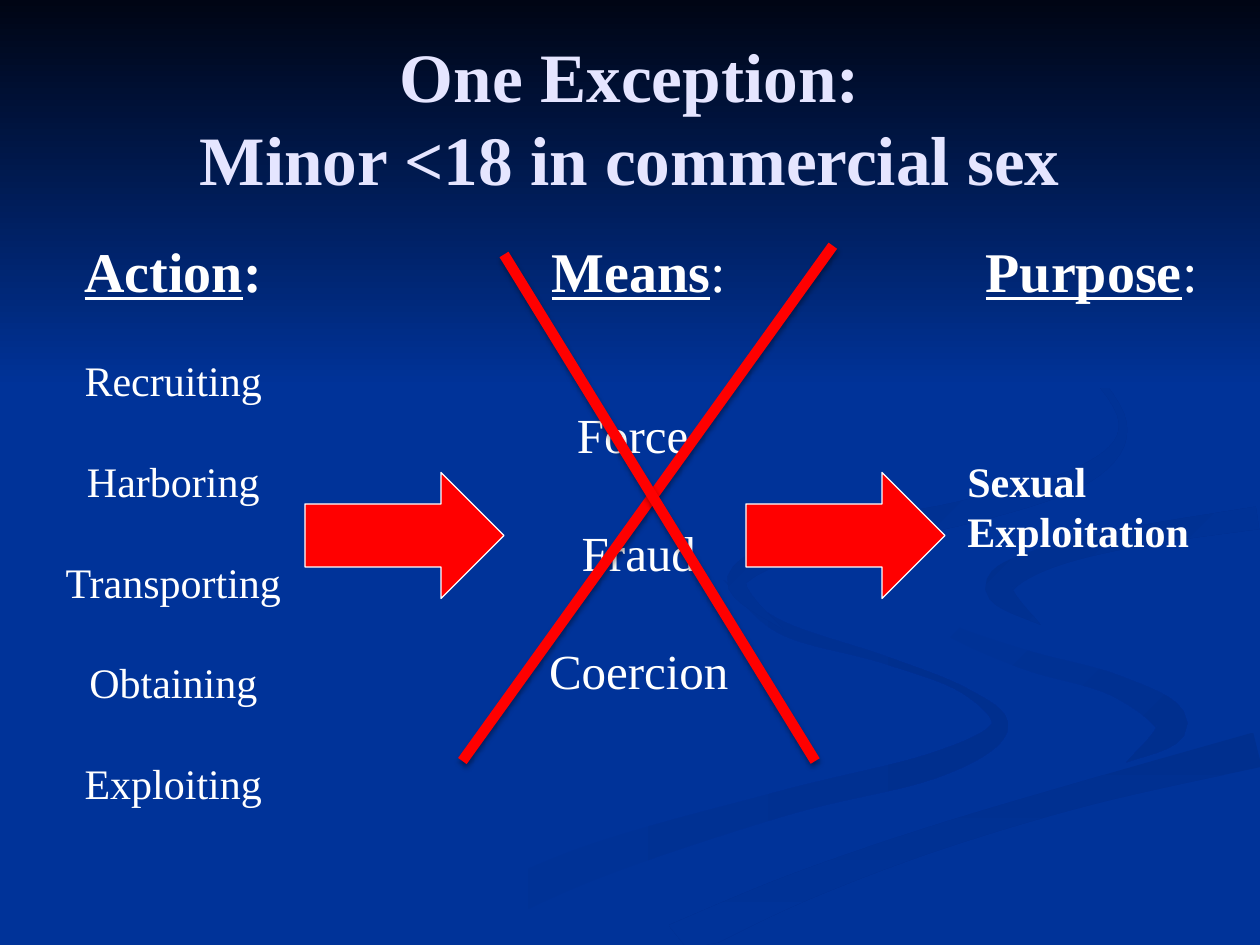
from math import hypot

from lxml import etree
from pptx import Presentation
from pptx.dml.color import RGBColor
from pptx.enum.shapes import MSO_CONNECTOR, MSO_SHAPE
from pptx.enum.text import MSO_ANCHOR, MSO_AUTO_SIZE, PP_ALIGN
from pptx.oxml import parse_xml
from pptx.oxml.ns import nsdecls, qn
from pptx.util import Inches, Pt

CENTER, LEFT = PP_ALIGN.CENTER, PP_ALIGN.LEFT
MIDDLE = MSO_ANCHOR.MIDDLE
NO_AUTOFIT = MSO_AUTO_SIZE.NONE
RECTANGLE, RIGHT_ARROW = MSO_SHAPE.RECTANGLE, MSO_SHAPE.RIGHT_ARROW
STRAIGHT = MSO_CONNECTOR.STRAIGHT

FONT = "Times New Roman"
NAVY, BLUE, SHADE = "000514", "003399", "002F8E"
WHITE, RED, LAVENDER = "FFFFFF", "FF0000", "E5E5FF"
SLIDE_WIDTH, SLIDE_HEIGHT = 10, 7.5
HEADING_SIZE, ITEM_SIZE, LINE_HEIGHT = 32, 24, 1.2
COLUMN_TOP = 1.83
ARROW_LEFT, ARROW_TOP, ARROW_PITCH = 2.42, 3.75, 3.5
STRIKE_BOTTOM = 6.04
CURVE_STEPS = 8

LEFT_SWIRL = [(5.74, 4.6, 0), (6.2, 4.98, 0.1), (7, 5.23, 0.06), (7.65, 5.48, 0.05),
              (7.93, 5.78, 0.14), (7.4, 6.08, 0.2), (6.2, 6.38, 0.2), (4.6, 6.88, 0.28),
              (3.3, 7.49, 0.3)]
RIGHT_SWIRL = [(7.24, 4.64, 0), (7.45, 4.95, 0.08), (8.12, 5.23, 0.15),
               (8.85, 5.44, 0.17), (9.3, 5.75, 0.25), (8.94, 6.05, 0)]
LOWER_SWIRL = [(9.98, 5.95, 0.28), (8.64, 6.29, 0.2), (7.4, 6.66, 0.2),
               (6.3, 7.06, 0.24), (5.37, 7.48, 0.3)]
EDGE_SWIRL = [(9.98, 4.11, 0.18), (8.95, 4.27, 0.16), (8.25, 4.45, 0.18),
              (7.93, 4.67, 0.22), (8.26, 4.96, 0)]
UPPER_SWIRL = [(7.62, 2.33, 0), (8.45, 2.77, 0.05), (8.91, 3.35, 0.06),
               (8.6, 3.77, 0.15), (7.6, 4.08, 0.19), (6.5, 4.28, 0.18),
               (5.85, 4.6, 0.16), (6.22, 5, 0)]


def color(value):
    """Return the colour for a hex string."""
    return RGBColor.from_string(value)


def curve_through(waypoints):
    """Return a smooth Catmull-Rom run of (x, y, width) through the waypoints."""
    padded = [waypoints[0], *waypoints, waypoints[-1]]
    curve = []
    for before, start, end, after in zip(padded, padded[1:], padded[2:], padded[3:]):
        for step in range(CURVE_STEPS):
            t = step / CURVE_STEPS
            curve.append(tuple(
                b + ((c - a) * t + (2 * a - 5 * b + 4 * c - d) * t ** 2
                     + (3 * b - a - 3 * c + d) * t ** 3) / 2
                for a, b, c, d in zip(before, start, end, after)))
    return [*curve, waypoints[-1]]


def ribbon_outline(waypoints):
    """Return the outline of a ribbon that follows its centre line."""
    curve = curve_through(waypoints)
    one_side, other_side = [], []
    neighbours = zip([curve[0], *curve], curve, [*curve[1:], curve[-1]])
    for previous, (x, y, width), following in neighbours:
        run, rise = following[0] - previous[0], following[1] - previous[1]
        half = max(width, 0) / 2 / hypot(run, rise)
        one_side.append((x - rise * half, y + run * half))
        other_side.append((x + rise * half, y - run * half))
    outline = one_side + other_side[::-1]
    return [(x, min(y, SLIDE_HEIGHT)) for x, y in outline]


def fill_gradient(shape, first, last, angle):
    """Give a shape a clockwise gradient, no outline and no shadow."""
    shape.shadow.inherit = False
    shape.line.fill.background()
    shape.fill.gradient()
    shape.fill.gradient_angle = (360 - angle) % 360
    for stop, value in zip(shape.fill.gradient_stops, (first, last)):
        stop.color.rgb = color(value)


def add_swirl(slide, waypoints, first, last, angle):
    """Add a faint tapered ribbon to the backdrop."""
    points = ribbon_outline(waypoints)
    builder = slide.shapes.build_freeform(
        *[Inches(value) for value in points[0]])
    builder.add_line_segments([(Inches(x), Inches(y)) for x, y in points[1:]])
    fill_gradient(builder.convert_to_shape(), first, last, angle)


def add_backdrop(slide):
    """Draw the blue ground, its swirls and the dark band at the top."""
    slide.background.fill.solid()
    slide.background.fill.fore_color.rgb = color(BLUE)
    add_swirl(slide, LEFT_SWIRL, BLUE, SHADE, 0)
    add_swirl(slide, RIGHT_SWIRL, BLUE, SHADE, 45)
    add_swirl(slide, LOWER_SWIRL, SHADE, BLUE, 90)
    add_swirl(slide, EDGE_SWIRL, SHADE, BLUE, 45)
    add_swirl(slide, UPPER_SWIRL, SHADE, BLUE, 45)
    band = slide.shapes.add_shape(RECTANGLE, 0, 0, Inches(SLIDE_WIDTH), Inches(3.08))
    fill_gradient(band, NAVY, BLUE, 90)


def add_run(paragraph, text, size=ITEM_SIZE, bold=False, underline=False, value=WHITE):
    """Add a formatted run to a paragraph."""
    run = paragraph.add_run()
    run.text = text
    font = run.font
    font.name, font.size, font.bold, font.underline = FONT, Pt(size), bold, underline
    font.color.rgb = color(value)


def set_title(slide, lines):
    """Place and fill the title above the backdrop."""
    title = slide.shapes.title
    slide.shapes._spTree.append(title._element)
    title.left, title.top = Inches(0.5), Inches(0.3)
    title.width, title.height = Inches(9), Inches(1.25)
    frame = title.text_frame
    frame.auto_size, frame.vertical_anchor, frame.word_wrap = NO_AUTOFIT, MIDDLE, True
    paragraph = frame.paragraphs[0]
    paragraph.alignment = CENTER
    for index, line in enumerate(lines):
        if index:
            paragraph.add_line_break()
        add_run(paragraph, line, size=39.6, bold=True, value=LAVENDER)


def add_column(slide, left, width, height, heading, items, size=ITEM_SIZE, bold=False,
               colon_bold=False, alignment=CENTER, lines_below_heading=1):
    """Add an underlined heading with items one line apart below it."""
    box = slide.shapes.add_textbox(
        Inches(left), Inches(COLUMN_TOP), Inches(width), Inches(height))
    frame = box.text_frame
    frame.word_wrap = True
    paragraph = frame.paragraphs[0]
    paragraph.alignment = CENTER
    add_run(paragraph, heading, size=HEADING_SIZE, bold=True, underline=True)
    add_run(paragraph, ":", size=HEADING_SIZE, bold=colon_bold)
    for index, item in enumerate(items):
        paragraph = frame.add_paragraph()
        paragraph.alignment = alignment
        gap = size if index else ITEM_SIZE * lines_below_heading
        paragraph.space_before = Pt(round(gap * LINE_HEIGHT, 1))
        add_run(paragraph, item, size=size, bold=bold)


def add_arrow(slide, left):
    """Add a red block arrow between two columns."""
    shape = slide.shapes.add_shape(
        RIGHT_ARROW, Inches(left), Inches(ARROW_TOP), Inches(1.58), Inches(1))
    shape.shadow.inherit = False
    shape.fill.solid()
    shape.fill.fore_color.rgb = color(RED)
    shape.line.color.rgb = color(WHITE)
    shape.line.width = Pt(0.75)


def add_strike(slide, *ends):
    """Add a thick red line with a soft shadow below it."""
    connector = slide.shapes.add_connector(STRAIGHT, *[Inches(end) for end in ends])
    connector.line.color.rgb = color(RED)
    connector.line.width = Pt(6)
    effects = parse_xml(f"<a:effectLst {nsdecls('a')}/>")
    shadow = etree.SubElement(
        effects, qn("a:outerShdw"), blurRad=str(Pt(3.1)), dist=str(Pt(1.6)),
        dir="5400000", rotWithShape="0")
    shade = etree.SubElement(shadow, qn("a:srgbClr"), val="000000")
    etree.SubElement(shade, qn("a:alpha"), val="38000")
    connector._element.spPr.append(effects)


def main():
    """Build the slide and save it."""
    presentation = Presentation()
    presentation.slide_width = Inches(SLIDE_WIDTH)
    presentation.slide_height = Inches(SLIDE_HEIGHT)
    slide = presentation.slides.add_slide(presentation.slide_layouts[5])
    add_backdrop(slide)
    set_title(slide, ["One Exception:", "Minor <18 in commercial sex"])
    for index in range(2):
        add_arrow(slide, ARROW_LEFT + index * ARROW_PITCH)
    add_column(slide, 3.67, 2.8, 4.21, "Means", ["Force ", "Fraud", "Coercion"],
               size=28, lines_below_heading=2)
    add_column(slide, 7.58, 2.17, 3.47, "Purpose", ["Sexual Exploitation"],
               bold=True, alignment=LEFT, lines_below_heading=3)
    add_strike(slide, 6.61, 1.95, 3.67, STRIKE_BOTTOM)
    add_strike(slide, 4, 2.02, 6.47, STRIKE_BOTTOM)
    actions = ["Recruiting", "Harboring", "Transporting", "Obtaining", "Exploiting"]
    add_column(slide, 0, 2.75, 5.79, "Action", actions, colon_bold=True)
    presentation.save("out.pptx")


if __name__ == "__main__":
    main()
